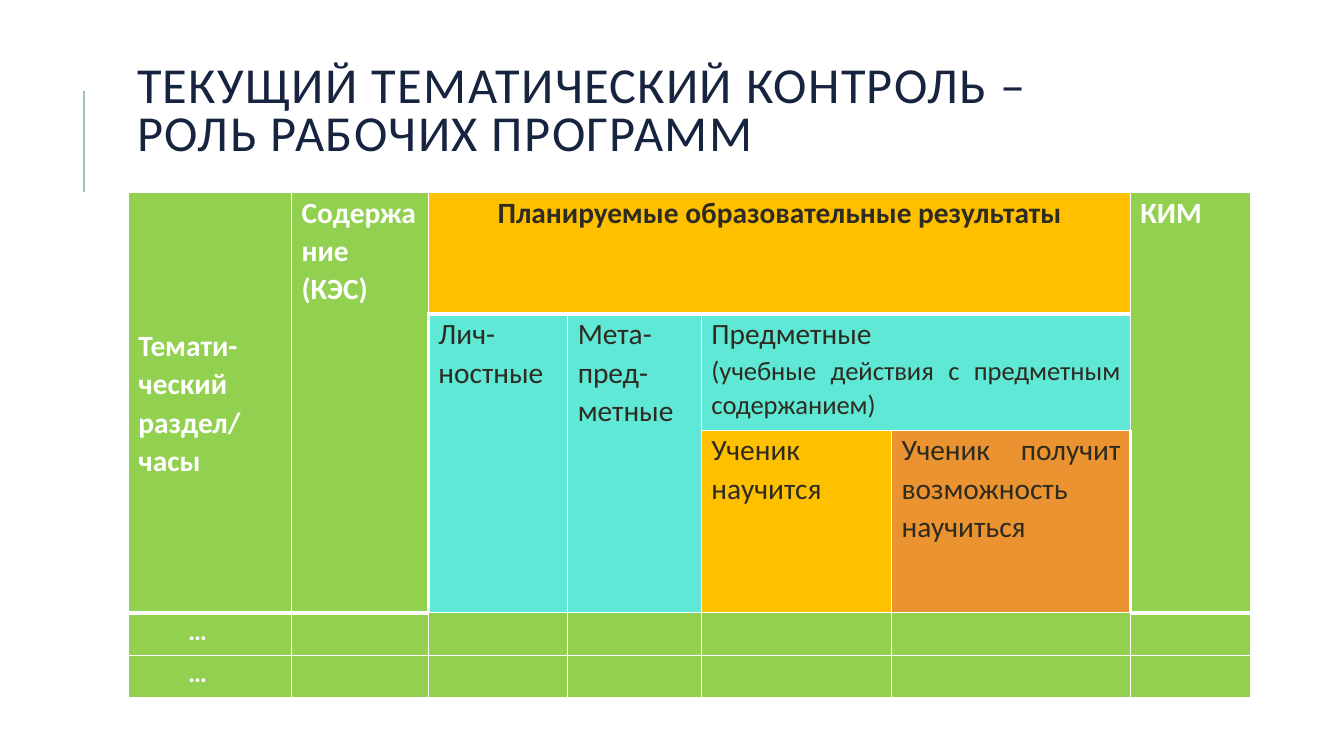
from lxml import etree
from pptx import Presentation
from pptx import util as u
from pptx.dml.color import RGBColor
from pptx.enum import shapes, text
from pptx.oxml.ns import qn
from pptx.util import Cm, Pt

FONT = "Calibri"
NAVY = RGBColor(0x17, 0x24, 0x40)
SAGE = RGBColor(0x9C, 0xBE, 0xBD)
WHITE = RGBColor(0xFF, 0xFF, 0xFF)
DARK = RGBColor(0x2E, 0x2B, 0x21)
GREEN = RGBColor(0x92, 0xD0, 0x50)
AMBER = RGBColor(0xFF, 0xC0, 0x00)
TURQUOISE = RGBColor(0x5F, 0xE8, 0xD6)
ORANGE = RGBColor(0xEA, 0x93, 0x30)

COL_WIDTHS = [4.11, 3.45, 3.51, 3.37, 4.79, 6.02, 3.02]
ROW_HEIGHTS = [3.07, 2.92, 4.6, 1.07, 1.07]
TOP, MIDDLE = text.MSO_ANCHOR.TOP, text.MSO_ANCHOR.MIDDLE
JUSTIFY, CENTER = text.PP_ALIGN.JUSTIFY, text.PP_ALIGN.CENTER

# row, column, rows spanned, columns spanned, fill, text colour, bold, (text, size) lines
HEADINGS = [
    (0, 0, 3, 1, GREEN, WHITE, True, [("Темати-ческий раздел/ часы", 21)]),
    (0, 1, 3, 1, GREEN, WHITE, True, [("Содержание (КЭС)", 21)]),
    (0, 2, 1, 4, AMBER, DARK, True, [("Планируемые образовательные результаты", 21)]),
    (0, 6, 3, 1, GREEN, WHITE, True, [("КИМ", 21)]),
    (1, 2, 2, 1, TURQUOISE, DARK, False, [("Лич-ностные", 21)]),
    (1, 3, 2, 1, TURQUOISE, DARK, False, [("Мета-пред-метные ", 21)]),
    (1, 4, 1, 2, TURQUOISE, DARK, False,
     [("Предметные ", 21), ("(учебные действия с предметным содержанием)", 19)]),
    (2, 4, 1, 1, AMBER, DARK, False, [("Ученик научится", 21)]),
    (2, 5, 1, 1, ORANGE, DARK, False, [("Ученик получит возможность научиться", 21)]),
]


def heavy_edges():
    """Return the (row, column, side) edges drawn with the thick rule."""
    edges = set()
    for c in range(2, 6):
        edges |= {(0, c, "B"), (1, c, "T")}
    for c in (0, 1, 6):
        edges |= {(2, c, "B"), (3, c, "T")}
    for r in (1, 2):
        edges |= {(r, 1, "R"), (r, 2, "L"), (r, 5, "R"), (r, 6, "L")}
    return edges


def set_borders(cell, widths):
    tcPr = cell._tc.get_or_add_tcPr()
    for side, width in widths.items():
        ln = etree.SubElement(tcPr, qn(f"a:ln{side}"), w=str(Pt(width)))
        fill = etree.SubElement(ln, qn("a:solidFill"))
        etree.SubElement(fill, qn("a:srgbClr"), val=str(WHITE))


def write_cell(cell, lines, color, bold, align=JUSTIFY, indent=None):
    tf = cell.text_frame
    for i, (line, size) in enumerate(lines):
        p = tf.add_paragraph() if i else tf.paragraphs[0]
        p.alignment, p.line_spacing = align, 1.07
        if indent:
            p._p.get_or_add_pPr().set("indent", str(indent))
        r = p.add_run()
        r.text = line
        r.font.name, r.font.size, r.font.bold = FONT, Pt(size), bold
        r.font.color.rgb = color


def add_title(s, left, top, width, height):
    sp = s.shapes.title
    sp.left, sp.top, sp.width, sp.height = left, top, width, height
    tf = sp.text_frame
    tf.auto_size, tf.word_wrap = text.MSO_AUTO_SIZE.NONE, True
    tf.vertical_anchor = MIDDLE
    p = tf.paragraphs[0]
    p.alignment, p.line_spacing = text.PP_ALIGN.LEFT, 0.8
    r = p.add_run()
    r.text = "ТЕКУЩИЙ ТЕМАТИЧЕСКИЙ КОНТРОЛЬ – РОЛЬ РАБОЧИХ ПРОГРАММ"
    r._r.get_or_add_rPr().set("spc", "100")
    p.font.name, p.font.size = FONT, Pt(36)
    p.font.color.rgb = NAVY


def add_accent_line(s, x, top, bottom):
    line = s.shapes.add_connector(shapes.MSO_CONNECTOR.STRAIGHT, x, bottom, x, top)
    line.line.color.rgb, line.line.width = SAGE, Pt(1.5)
    etree.SubElement(line._element.spPr, qn("a:effectLst"))


def add_programme_table(s, left, top):
    rows, cols = len(ROW_HEIGHTS), len(COL_WIDTHS)
    table = s.shapes.add_table(rows, cols, left, top, Cm(sum(COL_WIDTHS)),
                               Cm(sum(ROW_HEIGHTS))).table
    table.first_row = table.horz_banding = False
    for column, width in zip(table.columns, COL_WIDTHS):
        column.width = Cm(width)
    for row, height in zip(table.rows, ROW_HEIGHTS):
        row.height = Cm(height)

    heavy = heavy_edges()
    for r in range(rows):
        for c in range(cols):
            cell = table.cell(r, c)
            cell.margin_left = cell.margin_right = u.Cm(0.25)
            cell.margin_top = cell.margin_bottom = 0
            set_borders(cell, {side: 3 if (r, c, side) in heavy else 1 for side in "LRTB"})
            cell.fill.solid()
            cell.fill.fore_color.rgb = GREEN

    for r, c, down, across, fill, color, bold, lines in HEADINGS:
        cell = table.cell(r, c)
        if down * across > 1:
            cell.merge(table.cell(r + down - 1, c + across - 1))
        cell.fill.fore_color.rgb = fill
        cell.vertical_anchor = MIDDLE if c == 0 else TOP
        write_cell(cell, lines, color, bold, CENTER if across == 4 else JUSTIFY)
    for r in (3, 4):
        write_cell(table.cell(r, 0), [("…", 19)], WHITE, True, indent=Cm(1.25))


def main():
    prs = Presentation()
    prs.slide_width, prs.slide_height = Cm(33.87), Cm(19.05)
    s = prs.slides.add_slide(prs.slide_layouts[5])
    add_accent_line(s, Cm(2.11), Cm(2.29), Cm(4.83))
    add_title(s, Cm(3.2), Cm(1.5), Cm(23.93), Cm(2.69))
    add_programme_table(s, Cm(3.24), Cm(4.85))
    prs.save("out.pptx")


if __name__ == "__main__":
    main()
